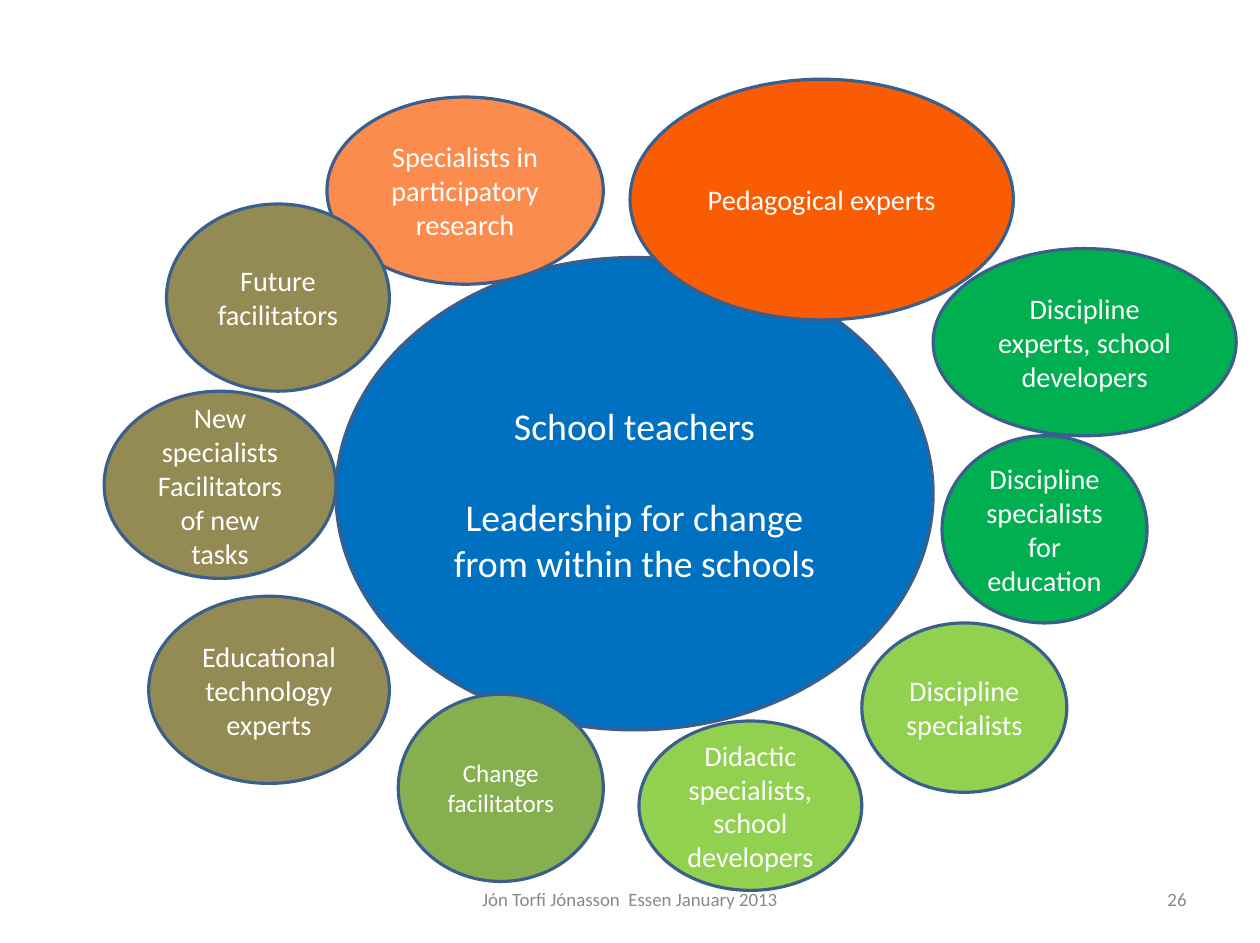
from pptx import Presentation
from pptx import util as u
from pptx.dml.color import RGBColor
from pptx.enum import shapes, text

BLUE = RGBColor(0x00, 0x70, 0xC0)
GREEN = RGBColor(0x00, 0xB0, 0x50)
LIME = RGBColor(0x92, 0xD0, 0x50)
MOSS = RGBColor(0x86, 0xAF, 0x4F)
OLIVE = RGBColor(0x94, 0x8A, 0x54)
ORANGE = RGBColor(0xFA, 0x5C, 0x04)
PEACH = RGBColor(0xFC, 0x8C, 0x4E)
EDGE = RGBColor(0x3A, 0x5F, 0x8C)
GREY = RGBColor(0x89, 0x89, 0x89)
WHITE = RGBColor(0xFF, 0xFF, 0xFF)

# Ovals from back to front: lines, fill, (column, row, columns, rows), size, gap
OVALS = [
    (["Discipline specialists"], LIME, (85, 61, 23, 19), 18, 0),
    (["Discipline specialists for education"], GREEN, (94, 40, 23, 21), 18, 0),
    (["Didactic specialists, school developers"], LIME, (60, 72, 25, 19), 18, 0),
    (["Discipline experts, school developers"], GREEN, (93, 19, 34, 21), 18, 0),
    (["School teachers", "Leadership for change from within the schools"],
     BLUE, (26, 20, 67, 53), 24, 29.3),
    (["Pedagogical experts"], ORANGE, (59, 0, 43, 27), 18, 0),
    (["Specialists in participatory research"], PEACH, (25, 2, 31, 21), 18, 0),
    (["Future facilitators"], OLIVE, (7, 14, 25, 21), 18, 0),
    (["Educational technology experts"], OLIVE, (5, 58, 27, 21), 18, 0),
    (["Change facilitators"], MOSS, (33, 69, 23, 21), 16, 0),
    (["New specialists", "Facilitators of new tasks"], OLIVE, (0, 35, 26, 21), 18, 0),
]

# Footer: text, left and width in inches, alignment
FOOT = [
    ("Jón Torfi Jónasson  Essen January 2013", 3.8, 3.53, text.PP_ALIGN.CENTER),
    ("26", 7.98, 2.6, text.PP_ALIGN.RIGHT),
]

# Grid of 2 mm cells, starting at the top left oval edges
CELL = u.Cm(0.2)
LEFT, TOP = u.Inches(0.92), u.Inches(0.7)


def write(shape, lines, size=18, color=WHITE, align=text.PP_ALIGN.CENTER, gap=0):
    frame = shape.text_frame
    frame.word_wrap = True
    frame.vertical_anchor = text.MSO_ANCHOR.MIDDLE
    for i, line in enumerate(lines):
        para = frame.add_paragraph() if i else frame.paragraphs[0]
        para.text = line
        para.alignment = align
        para.space_before = u.Pt(gap if i else 0)
        para.font.name = "Calibri"
        para.font.size = u.Pt(size)
        para.font.color.rgb = color


def main():
    deck = Presentation()
    deck.slide_width, deck.slide_height = u.Inches(11.13), u.Inches(8.33)
    slide = deck.slides.add_slide(deck.slide_layouts[6])

    # Footer and slide number
    for line, left, width, align in FOOT:
        box = slide.shapes.add_textbox(
            u.Inches(left), u.Inches(7.72), u.Inches(width), u.Inches(0.44))
        write(box, [line], size=12, color=GREY, align=align)

    # Ring of experts around the school teachers
    for lines, fill, (col, row, cols, rows), size, gap in OVALS:
        oval = slide.shapes.add_shape(
            shapes.MSO_SHAPE.OVAL, LEFT + col * CELL, TOP + row * CELL,
            cols * CELL, rows * CELL)
        oval.shadow.inherit = False
        oval.fill.solid()
        oval.fill.fore_color.rgb = fill
        oval.line.color.rgb = EDGE
        oval.line.width = u.Pt(2)
        write(oval, lines, size=size, gap=gap)

    deck.save("out.pptx")


if __name__ == "__main__":
    main()
